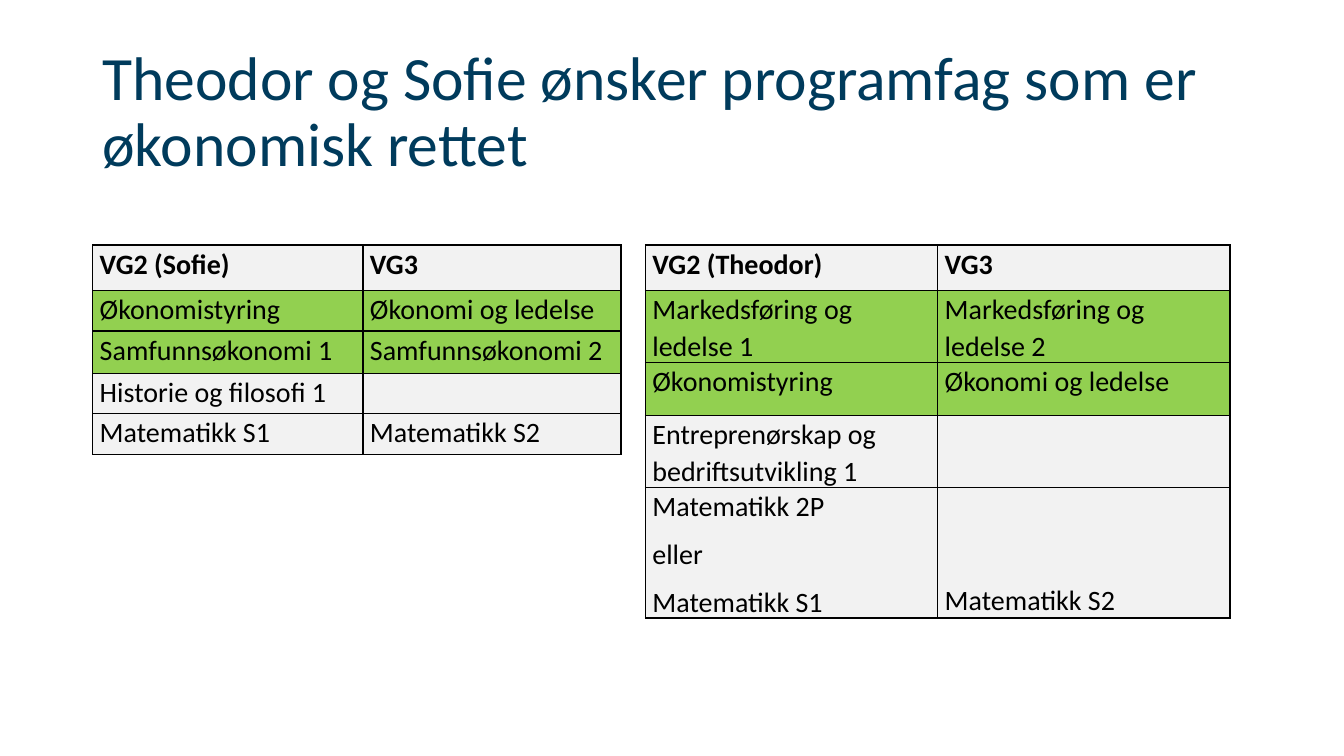
from lxml import etree
from pptx import Presentation
from pptx.dml.color import RGBColor
from pptx.enum.text import MSO_ANCHOR
from pptx.oxml.ns import qn
from pptx.util import Pt

MIDDLE, BOTTOM, TOP = MSO_ANCHOR.MIDDLE, MSO_ANCHOR.BOTTOM, MSO_ANCHOR.TOP
FONT = "Calibri"
COLORS = {"title": "003B5C", "text": "000000", "line": "000000",
          "plain": "F2F2F2", "econ": "92D050"}

TITLE = "Theodor og Sofie ønsker programfag som er økonomisk rettet"
TABLE_TOP = 175
ECON_ROWS = (1, 2)
PLANS = [
    {"left": 66.25, "cols": [193, 184.3],
     "heights": [32.4, 29, 30.2, 29, 29],
     "rows": [("VG2 (Sofie)", "VG3"),
              ("Økonomistyring", "Økonomi og ledelse"),
              ("Samfunnsøkonomi 1", "Samfunnsøkonomi 2"),
              ("Historie og filosofi 1", ""),
              ("Matematikk S1", "Matematikk S2")]},
    {"left": 461, "cols": [208.8, 208.8],
     "heights": [32.4, 29.5, 38.2, 49, 92.2],
     "rows": [("VG2 (Theodor)", "VG3"),
              ("Markedsføring og ledelse 1", "Markedsføring og ledelse 2"),
              ("Økonomistyring", "Økonomi og ledelse"),
              ("Entreprenørskap og bedriftsutvikling 1", ""),
              ("Matematikk 2P\neller\nMatematikk S1", "Matematikk S2")]},
]


def rgb(name):
    return RGBColor.from_string(COLORS[name])


def style(para, size, color, bold=False):
    font = para.font
    font.name, font.size, font.bold = FONT, Pt(size), bold
    font.color.rgb = rgb(color)


def add_title(slide):
    box = slide.shapes.add_textbox(Pt(66), Pt(28.75), Pt(828), Pt(104.4))
    frame = box.text_frame
    frame.word_wrap = True
    frame.vertical_anchor = MIDDLE
    frame.text = TITLE
    para = frame.paragraphs[0]
    para.line_spacing = 0.9
    style(para, 44, "title")


def add_borders(cell):
    props = cell._tc.get_or_add_tcPr()
    for side in ("lnL", "lnR", "lnT", "lnB"):
        line = etree.SubElement(props, qn("a:" + side), w=str(Pt(1)))
        fill = etree.SubElement(line, qn("a:solidFill"))
        etree.SubElement(fill, qn("a:srgbClr"), val=COLORS["line"])


def fill_cell(cell, text, fill, bold, anchor):
    add_borders(cell)
    cell.fill.solid()
    cell.fill.fore_color.rgb = rgb(fill)
    cell.margin_left = cell.margin_right = Pt(5)
    cell.margin_top = cell.margin_bottom = 0
    cell.vertical_anchor = anchor
    cell.text = text
    for para in cell.text_frame.paragraphs:
        para.line_spacing = 1.07
        para.space_after = Pt(8)
        style(para, 20, "text", bold)


def add_plan(slide, plan):
    rows, cols, heights = plan["rows"], plan["cols"], plan["heights"]
    table = slide.shapes.add_table(
        len(rows), len(cols), Pt(plan["left"]), Pt(TABLE_TOP),
        Pt(sum(cols)), Pt(sum(heights))).table
    table.first_row = table.horz_banding = False
    for col, width in zip(table.columns, cols):
        col.width = Pt(width)
    for r, texts in enumerate(rows):
        table.rows[r].height = Pt(heights[r])
        fill = "econ" if r in ECON_ROWS else "plain"
        most = max(text.count("\n") for text in texts)
        for c, text in enumerate(texts):
            # A shorter cell lines up with the last line of its neighbour
            anchor = BOTTOM if text.count("\n") < most else TOP
            fill_cell(table.cell(r, c), text, fill, r == 0, anchor)


def main():
    deck = Presentation()
    deck.slide_width, deck.slide_height = Pt(960), Pt(540)
    slide = deck.slides.add_slide(deck.slide_layouts[6])
    add_title(slide)
    for plan in PLANS:
        add_plan(slide, plan)
    deck.save("out.pptx")


if __name__ == "__main__":
    main()
